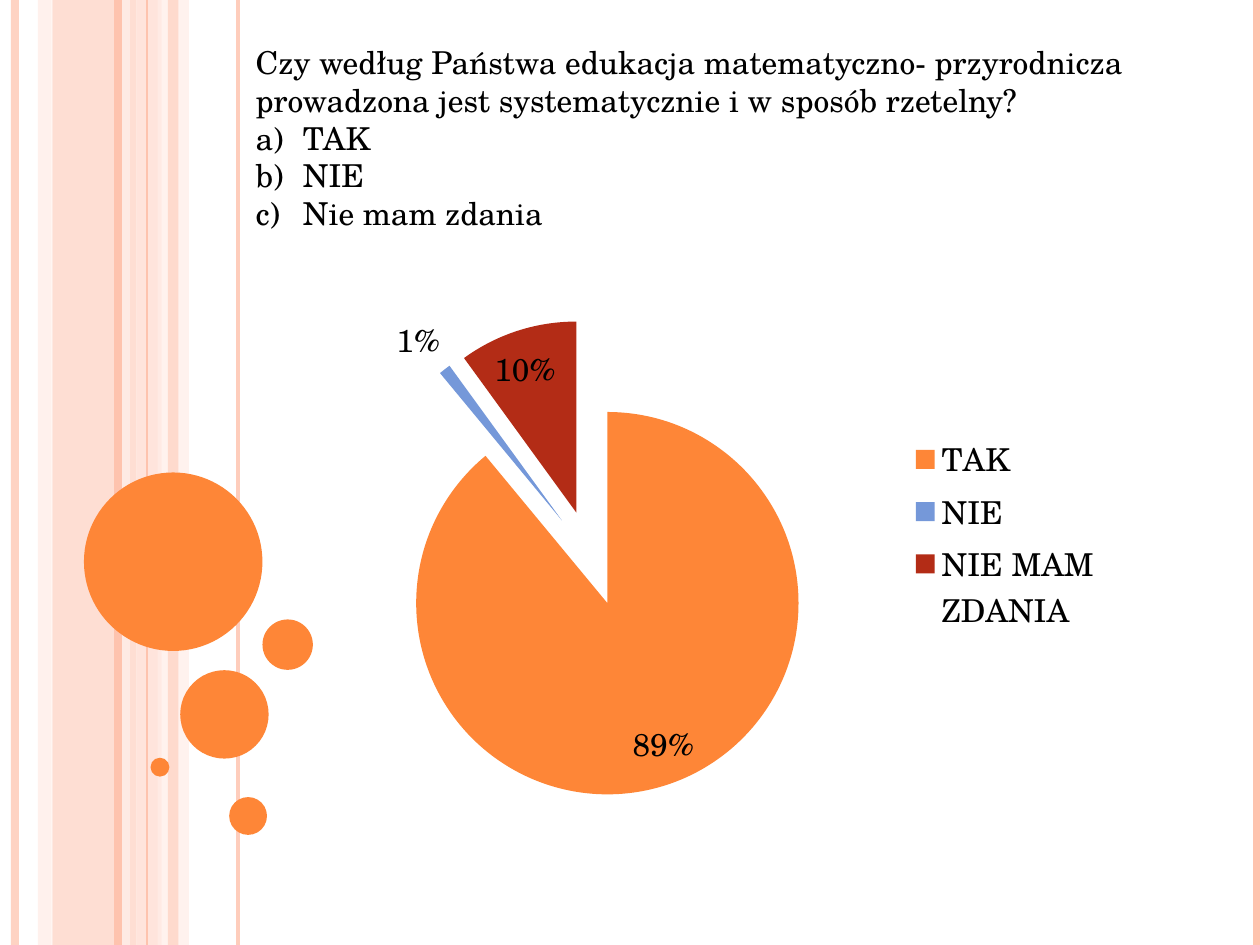
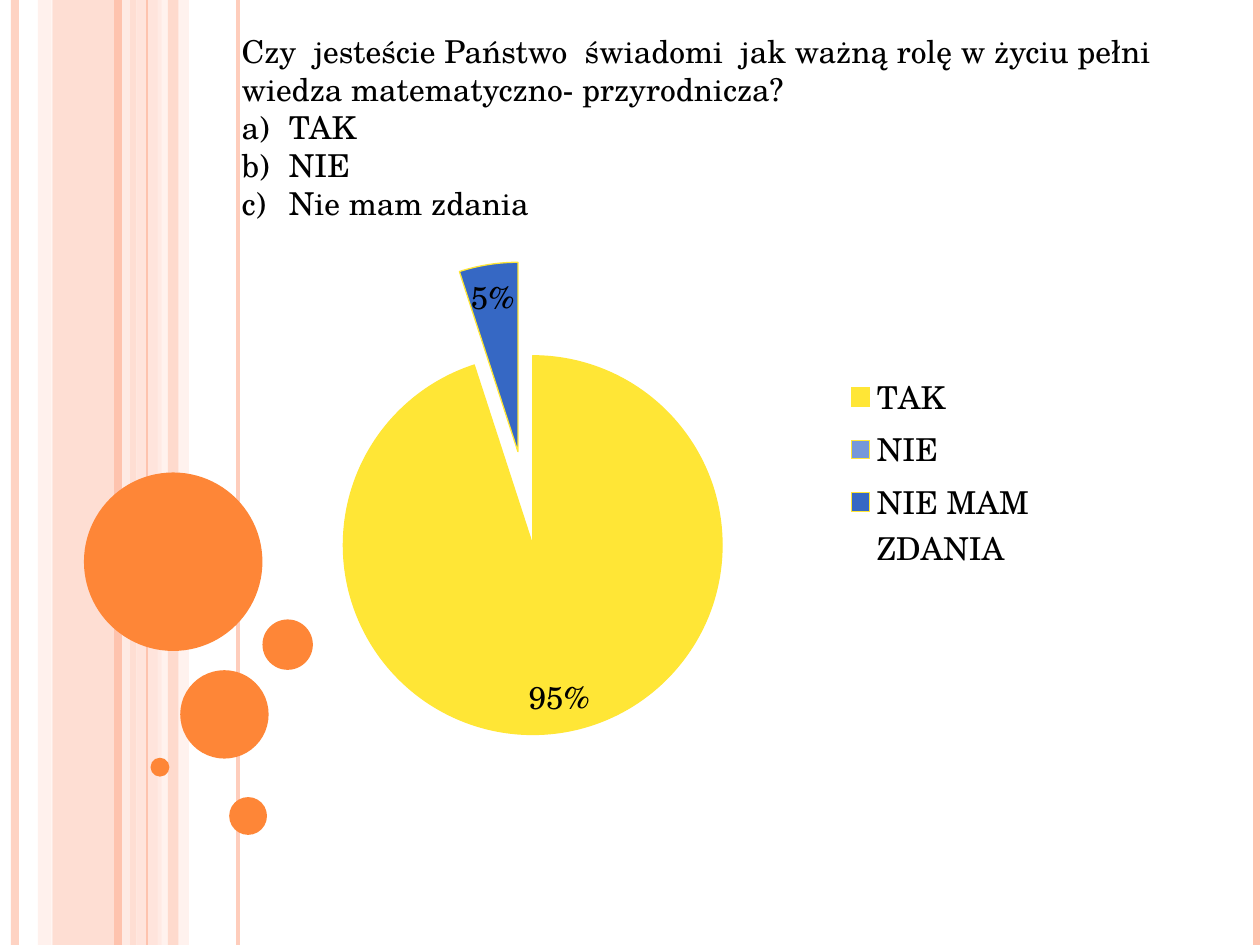
from lxml import etree
from pptx import Presentation
from pptx.chart.data import CategoryChartData
from pptx.dml.color import RGBColor
from pptx.enum import chart as charts, shapes, text
from pptx.oxml import ns
from pptx.util import Pt

FONT = "TeX Gyre Schola"
TEXT_SIZE = 18
PAGE_WIDTH, PAGE_HEIGHT = 720, 540
COLORS = {
    "text": "000000",
    "salmon": "FEC3AE",
    "peach": "FFD9CE",
    "blush": "FFEDE8",
    "orange": "FE8637",
    "sky": "7598D9",
    "red": "B32C16",
    "yellow": "FFE636",
    "blue": "3668C4",
}
BANDS = [
    (30, 48, "salmon", 54),
    (21.6, 8, "peach", 36),
    (78, 14.4, "peach", 70),
    (90, 18, "blush", 71),
    (96, 6, "salmon", 51),
]
STRIPES = [
    (8.5, 4.5, "salmon", 73),
    (72, 4.5, "blush", 83),
    (67.2, 4.5, "salmon", 100),
    (136, 2.25, "salmon", 82),
    (84, 0.75, "salmon", 100),
    (718, 4.5, "salmon", 100),
]
BUBBLES = [
    (48, 270, 102),
    (103, 383, 50.5),
    (86, 433, 10.8),
    (131, 455.5, 21.6),
    (150, 354, 28.8),
]
ANSWERS = ["TAK", "NIE", "Nie mam zdania"]
SURVEY = [
    {
        "question": "Czy według Państwa edukacja matematyczno- przyrodnicza "
                    "prowadzona jest systematycznie i w sposób rzetelny?",
        "question_area": (139, 21, 516, 117),
        "chart_area": (157, 145.5, 480, 320),
        "shares": (0.89, 0.01, 0.1),
        "slices": ("orange", "sky", "red"),
        "outline": None,
    },
    {
        "question": "Czy  jesteście Państwo  świadomi  jak ważną rolę w życiu pełni "
                    "wiedza matematyczno- przyrodnicza?",
        "question_area": (131, 15, 562, 117),
        "chart_area": (120, 110, 480, 320),
        "shares": (0.95, 0, 0.05),
        "slices": ("yellow", "sky", "blue"),
        "outline": "yellow",
    },
]


def rgb(name):
    return RGBColor.from_string(COLORS[name])


def points(*lengths):
    return [Pt(length) for length in lengths]


def paint(fill, color, opacity=100):
    fill.solid()
    fill.fore_color.rgb = rgb(color)
    if opacity < 100:
        tint = fill._xPr.find(".//" + ns.qn("a:srgbClr"))
        etree.SubElement(tint, ns.qn("a:alpha"), val=str(opacity * 1000))


def style_font(font):
    font.name = FONT
    font.size = Pt(TEXT_SIZE)
    font.color.rgb = rgb("text")


def add_solid(page, kind, area, color, opacity=100):
    solid = page.shapes.add_shape(kind, *points(*area))
    solid.shadow.inherit = False
    paint(solid.fill, color, opacity)
    solid.line.fill.background()


def add_stripe(page, x, width, color, opacity):
    stripe = page.shapes.add_connector(
        shapes.MSO_CONNECTOR.STRAIGHT, *points(x, 0, x, PAGE_HEIGHT))
    stripe.line.width = Pt(width)
    paint(stripe.line.fill, color, opacity)
    etree.SubElement(stripe._element.spPr, ns.qn("a:effectLst"))


def add_backdrop(page):
    for left, width, color, opacity in BANDS:
        add_solid(page, shapes.MSO_SHAPE.RECTANGLE,
                  (left, 0, width, PAGE_HEIGHT), color, opacity)
    for stripe in STRIPES:
        add_stripe(page, *stripe)
    for left, top, size in BUBBLES:
        add_solid(page, shapes.MSO_SHAPE.OVAL, (left, top, size, size), "orange")


def letter_item(para):
    properties = para._p.get_or_add_pPr()
    properties.set("marL", str(Pt(27)))
    properties.set("indent", str(-Pt(27)))
    etree.SubElement(properties, ns.qn("a:buFont"), typeface="+mj-lt")
    etree.SubElement(properties, ns.qn("a:buAutoNum"), type="alphaLcParenR")


def add_question(page, question, area):
    box = page.shapes.add_textbox(*points(*area))
    frame = box.text_frame
    frame.word_wrap = True
    frame.auto_size = text.MSO_AUTO_SIZE.SHAPE_TO_FIT_TEXT
    frame.text = "\n".join([question, *ANSWERS])
    for para in frame.paragraphs:
        for span in para.runs:
            style_font(span.font)
    for para in frame.paragraphs[1:]:
        letter_item(para)


def explode_slices(series, percent):
    explosion = etree.Element(ns.qn("c:explosion"), val=str(percent))
    series._element.find(ns.qn("c:dPt")).addprevious(explosion)


def add_pie(page, area, shares, slices, outline):
    data = CategoryChartData(number_format="0%")
    data.categories = [answer.upper() for answer in ANSWERS]
    data.add_series("Series 1", shares)
    chart = page.shapes.add_chart(
        charts.XL_CHART_TYPE.PIE, *points(*area), data).chart
    chart.has_title = False
    style_font(chart.font)
    chart.has_legend = True
    chart.legend.position = charts.XL_LEGEND_POSITION.RIGHT
    chart.legend.include_in_layout = False

    plot = chart.plots[0]
    plot.vary_by_categories = True
    series = plot.series[0]
    for index, color in enumerate(slices):
        look = series.points[index].format
        paint(look.fill, color)
        if outline:
            paint(look.line.fill, outline)
            look.line.width = Pt(0.75)
        else:
            look.line.fill.background()
    explode_slices(series, 25)

    labels = series.data_labels
    labels.show_value = True
    labels.number_format = "0%;;"
    labels.number_format_is_linked = False
    labels.position = charts.XL_LABEL_POSITION.BEST_FIT
    style_font(labels.font)


def main():
    deck = Presentation()
    deck.slide_width, deck.slide_height = points(PAGE_WIDTH, PAGE_HEIGHT)
    for entry in SURVEY:
        page = deck.slides.add_slide(deck.slide_layouts[6])
        add_backdrop(page)
        add_question(page, entry["question"], entry["question_area"])
        add_pie(page, entry["chart_area"], entry["shares"],
                entry["slices"], entry["outline"])
    deck.save("out.pptx")


if __name__ == "__main__":
    main()
